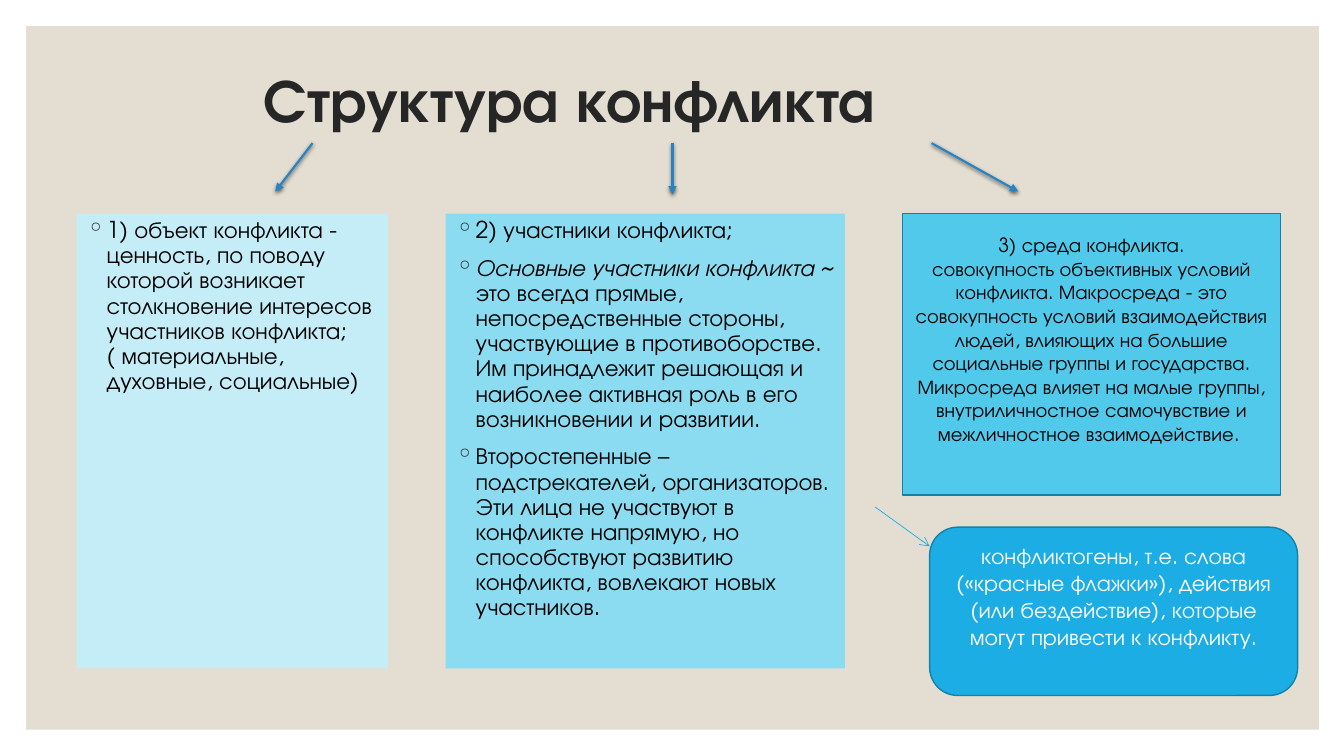
from lxml import etree
from pptx import Presentation
from pptx.dml.color import RGBColor
from pptx.enum.shapes import MSO_CONNECTOR, MSO_SHAPE
from pptx.enum.text import MSO_ANCHOR, MSO_AUTO_SIZE, PP_ALIGN
from pptx.oxml import parse_xml
from pptx.oxml.ns import qn
from pptx.util import Emu, Pt

PX = 9144  # 100 px to the inch
FONT = "TeX Gyre Adventor"
DRAWING_NS = "http://schemas.openxmlformats.org/drawingml/2006/main"
RECT, ROUNDED = MSO_SHAPE.RECTANGLE, MSO_SHAPE.ROUNDED_RECTANGLE
STRAIGHT = MSO_CONNECTOR.STRAIGHT
TOP, MIDDLE = MSO_ANCHOR.TOP, MSO_ANCHOR.MIDDLE
LEFT, CENTER = PP_ALIGN.LEFT, PP_ALIGN.CENTER

BEIGE = RGBColor(0xE3, 0xDE, 0xD1)
CHARCOAL = RGBColor(0x26, 0x26, 0x26)
BLACK = RGBColor(0x00, 0x00, 0x00)
WHITE = RGBColor(0xFF, 0xFF, 0xFF)
PALE_BLUE = RGBColor(0xC5, 0xED, 0xF8)
LIGHT_BLUE = RGBColor(0x8B, 0xDB, 0xF1)
SKY_BLUE = RGBColor(0x51, 0xC9, 0xEA)
BRIGHT_BLUE = RGBColor(0x1C, 0xAD, 0xE4)
EDGE_BLUE = RGBColor(0x15, 0x80, 0xA9)
ARROW_BLUE = RGBColor(0x26, 0x83, 0xC6)

SOFT_SHADOW = (
    f'<a:effectLst xmlns:a="{DRAWING_NS}">'
    '<a:outerShdw blurRad="38100" dist="12700" dir="5400000" rotWithShape="0">'
    '<a:srgbClr val="000000"><a:alpha val="63000"/></a:srgbClr>'
    '</a:outerShdw></a:effectLst>'
)
NO_SHADOW = f'<a:effectLst xmlns:a="{DRAWING_NS}"/>'


def add_box(kind, bounds, fill, edge=None):
    box = page.shapes.add_shape(kind, *(Emu(value * PX) for value in bounds))
    box.shadow.inherit = False
    box.fill.solid()
    box.fill.fore_color.rgb = fill
    if edge is None:
        box.line.fill.background()
    else:
        box.line.color.rgb = edge
        box.line.width = Pt(1)
    return box


def add_span(para, text, size, color, bold=False, italic=False):
    span = para.add_run()
    span.text = text
    span.font.name = FONT
    span.font.size = Pt(size)
    span.font.color.rgb = color
    span.font.bold = bold
    span.font.italic = italic


deck = Presentation()
deck.slide_width, deck.slide_height = Emu(1333 * PX), Emu(750 * PX)
page = deck.slides.add_slide(deck.slide_layouts[5])

panel = add_box(RECT, (26, 26, 1282, 698), BEIGE)

title = page.shapes.title
panel.element.addnext(title.element)
title.left, title.top = Emu(251 * PX), Emu(63 * PX)
title.width, title.height = Emu(831 * PX), Emu(79 * PX)
title.text_frame.auto_size = MSO_AUTO_SIZE.NONE
title.text_frame.vertical_anchor = MIDDLE
heading = title.text_frame.paragraphs[0]
heading.alignment = LEFT
heading.line_spacing = 0.9
add_span(heading, "Структура конфликта", 43.2, CHARCOAL, bold=True)

# Each paragraph is a list of (text, italic) spans.
bulleted_boxes = [
    ((76, 212, 309, 451), PALE_BLUE, [
        [("1) объект конфликта - ценность, по поводу которой возникает "
          "столкновение интересов участников конфликта;"
          "( материальные, духовные, социальные)", False)],
    ]),
    ((442, 212, 396, 451), LIGHT_BLUE, [
        [("2) участники конфликта;", False)],
        [("Основные участники конфликта ~", True),
         (" это всегда прямые, непосредственные стороны, участвующие в "
          "противоборстве. Им принадлежит решающая и наиболее активная роль "
          "в его возникновении и развитии.", False)],
        [("Второстепенные – подстрекателей, организаторов. Эти лица не "
          "участвуют в конфликте напрямую, но способствуют развитию "
          "конфликта, вовлекают новых участников.", False)],
    ]),
]
for bounds, fill, paragraphs in bulleted_boxes:
    frame = add_box(RECT, bounds, fill).text_frame
    frame.word_wrap = True
    frame.vertical_anchor = TOP
    for index, spans in enumerate(paragraphs):
        para = frame.add_paragraph() if index else frame.paragraphs[0]
        para.alignment = LEFT
        para.line_spacing = 0.9
        para.space_before = Pt(9)
        properties = para._p.get_or_add_pPr()
        properties.set("marL", str(20 * PX))
        properties.set("indent", str(-20 * PX))
        bullet_color = etree.SubElement(properties, qn("a:buClr"))
        etree.SubElement(bullet_color, qn("a:srgbClr"), val=str(CHARCOAL))
        etree.SubElement(properties, qn("a:buChar"), char="◦")
        for text, italic in spans:
            add_span(para, text, 16.6, BLACK, italic=italic)

centered_boxes = [
    (RECT, (895, 212, 375, 279), SKY_BLUE, 14, BLACK, [
        "3) среда конфликта.",
        "совокупность объективных условий конфликта. Макросреда - это "
        "совокупность условий взаимодействия людей, влияющих на большие "
        "социальные группы и государства. Микросреда влияет на малые группы, "
        "внутриличностное самочувствие и межличностное взаимодействие. ",
    ]),
    (ROUNDED, (922, 523, 365, 167), BRIGHT_BLUE, 16, WHITE, [
        "конфликтогены, т.е. слова («красные флажки»), действия (или "
        "бездействие), которые могут привести к конфликту.",
    ]),
]
for kind, bounds, fill, size, color, paragraphs in centered_boxes:
    frame = add_box(kind, bounds, fill, EDGE_BLUE).text_frame
    frame.word_wrap = True
    frame.vertical_anchor = MIDDLE
    frame.margin_bottom = Emu(35 * PX)
    for index, text in enumerate(paragraphs):
        para = frame.add_paragraph() if index else frame.paragraphs[0]
        para.alignment = CENTER
        add_span(para, text, size, color)

arrows = [
    ((310, 142, 273, 190), ARROW_BLUE, 1.5, "triangle", SOFT_SHADOW),
    ((667, 142, 667, 193), ARROW_BLUE, 1.5, "triangle", SOFT_SHADOW),
    ((924, 142, 1010, 190), ARROW_BLUE, 1.5, "triangle", SOFT_SHADOW),
    ((868, 503, 922, 542), BRIGHT_BLUE, 0.5, "arrow", NO_SHADOW),
]
for ends, color, width, head, effect in arrows:
    arrow = page.shapes.add_connector(STRAIGHT, *(Emu(value * PX) for value in ends))
    arrow.line.color.rgb = color
    arrow.line.width = Pt(width)
    etree.SubElement(arrow.line._get_or_add_ln(), qn("a:tailEnd"), type=head)
    arrow.element.spPr.append(parse_xml(effect))

deck.save("out.pptx")
